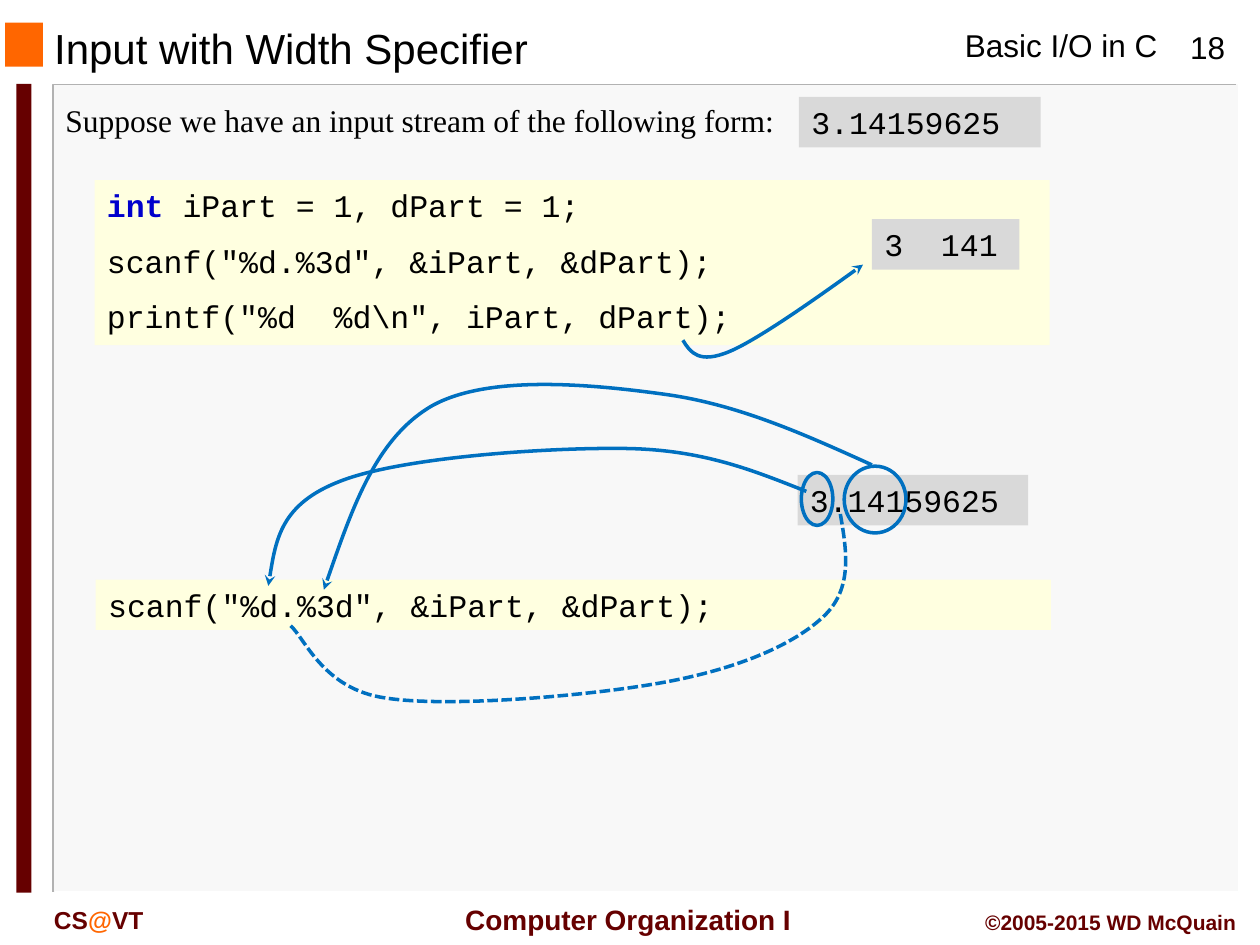
"""Builds the slide on scanf with a width specifier."""
from lxml import etree
from pptx import Presentation
from pptx import util as u
from pptx.dml.color import RGBColor
from pptx.enum import dml, shapes, text
from pptx.oxml.ns import qn

COLORS = {
    "ink": "000000", "maroon": "660000", "orange": "FF6600", "panel": "F8F8F8",
    "shade": "B2B2B2", "light": "FFFFFF", "stream": "D9D9D9", "code": "FFFFE0",
    "keyword": "0000CC", "arrow": "0070C0",
}
SANS, SERIF, MONO = "Arial", "Times New Roman", "Courier New"
LEFT, CENTER, RIGHT = text.PP_ALIGN.LEFT, text.PP_ALIGN.CENTER, text.PP_ALIGN.RIGHT
TOP, MIDDLE = text.MSO_ANCHOR.TOP, text.MSO_ANCHOR.MIDDLE


class SlideStyle:
    """Draws styled elements on a slide with a grid of 100 columns and 75 rows."""

    def __init__(self, deck):
        """Add a title-only page and measure its grid cell."""
        self.page = deck.slides.add_slide(deck.slide_layouts[5])
        self.column = deck.slide_width / 100
        self.row = deck.slide_height / 75

    def place(self, left, top, *size):
        """Turn grid columns and rows into lengths."""
        cells = (left, top, *size)
        steps = (self.column, self.row) * 2
        return [u.Emu(round(cell * step)) for cell, step in zip(cells, steps)]

    def color(self, name):
        """Look up a named colour."""
        return RGBColor.from_string(COLORS[name])

    def fill_text(self, box, lines, size=18, font=SANS, align=LEFT, anchor=TOP, bold=False):
        """Fill a box with lines, each a list of (words, colour) spans."""
        frame = box.text_frame
        frame.word_wrap = True
        frame.vertical_anchor = anchor
        for number, spans in enumerate(lines):
            para = frame.add_paragraph() if number else frame.paragraphs[0]
            para.alignment = align
            para.space_before = u.Pt(10 if number else 0)
            for words, color in spans:
                span = para.add_run()
                span.text = words
                span.font.name = font
                span.font.size = u.Pt(size)
                span.font.bold = bold or color == "keyword"
                span.font.color.rgb = self.color(color)

    def title(self, words, *area):
        """Move and format the title placeholder."""
        box = self.page.shapes.title
        box.left, box.top, box.width, box.height = self.place(*area)
        self.fill_text(box, [[(words, "ink")]], size=24, anchor=MIDDLE)

    def label(self, spans, *area, **style):
        """Add a one-line text box."""
        self.fill_text(self.page.shapes.add_textbox(*self.place(*area)), [spans], **style)

    def block(self, fill, *area, lines=()):
        """Add a filled rectangle, with code lines if given."""
        box = self.page.shapes.add_shape(shapes.MSO_SHAPE.RECTANGLE, *self.place(*area))
        box.shadow.inherit = False
        box.fill.solid()
        box.fill.fore_color.rgb = self.color(fill)
        box.line.fill.background()
        if lines:
            self.fill_text(box, lines, font=MONO)

    def stroke(self, shape, color, width):
        """Give a shape an outline and no fill."""
        shape.shadow.inherit = False
        shape.fill.background()
        shape.line.color.rgb = self.color(color)
        shape.line.width = u.Pt(width)

    def ring(self, *area):
        """Circle a part of the input."""
        oval = self.page.shapes.add_shape(shapes.MSO_SHAPE.OVAL, *self.place(*area))
        self.stroke(oval, "arrow", 2)

    def edge(self, points, color, width=1):
        """Draw an open outline through points."""
        start, *rest = [self.place(*point) for point in points]
        builder = self.page.shapes.build_freeform(*start)
        builder.add_line_segments(rest, close=False)
        shape = builder.convert_to_shape()
        self.stroke(shape, color, width)
        return shape

    def curve(self, points, dashed=False):
        """Draw a Bezier curve, dashed or ending in an arrowhead."""
        shape = self.edge(points, "arrow", 2)
        outline = shape.element.find(".//" + qn("a:path"))
        steps = outline.findall(qn("a:lnTo"))
        for first in range(0, len(steps), 3):
            bend = etree.SubElement(outline, qn("a:cubicBezTo"))
            for step in steps[first:first + 3]:
                bend.append(step[0])
                outline.remove(step)
        if dashed:
            shape.line.dash_style = dml.MSO_LINE.SQUARE_DOT
        else:
            line = shape.element.spPr.find(qn("a:ln"))
            etree.SubElement(line, qn("a:tailEnd"), type="stealth")


def main():
    """Build and save the deck."""
    deck = Presentation()
    deck.slide_width, deck.slide_height = u.Inches(10), u.Inches(7.5)
    style = SlideStyle(deck)

    style.block("panel", 4.3, 6.7, 94, 64.1)
    style.edge([(98.1, 6.7), (4.2, 6.7), (4.2, 70.8)], "shade")
    style.edge([(98.3, 6.7), (98.3, 70.8), (4.4, 70.8)], "light")
    style.block("orange", 0.4, 1.8, 3, 3.5)
    style.block("maroon", 1.3, 6.65, 1.2, 64.2)

    style.title("Input with Width Specifier", 3.3, 1.9, 63.3, 3.8)
    style.label([("Basic I/O in C", "ink")], 75.6, 1.6, 18.5, 4)
    style.label([("18", "ink")], 92.5, 1.7, 6.7, 4, align=CENTER)
    style.label([("CS", "maroon"), ("@", "orange"), ("VT", "maroon")],
                3.3, 71.3, 15, 3.3, size=14, bold=True)
    style.label([(" Computer Organization I", "maroon")], 35, 71.1, 29.1, 3.7,
                size=16, align=CENTER, anchor=MIDDLE, bold=True)
    style.label([("©2005-2015 WD McQuain", "maroon")], 73.3, 71.7, 25.8, 3,
                size=12, align=RIGHT, bold=True)

    stream = [[("3.14159625", "ink")]]
    scan = [('scanf("%d.%3d", &iPart, &dPart);', "ink")]
    program = [
        [("int ", "keyword"), ("iPart = 1, dPart = 1;", "ink")],
        scan,
        [(r'printf("%d  %d\n", iPart, dPart);', "ink")],
    ]
    style.label([("Suppose we have an input stream of the following form:", "ink")],
                4.2, 7.5, 92.5, 4, font=SERIF)
    style.block("stream", 63.4, 7.7, 19.2, 4, lines=stream)
    style.block("code", 7.5, 14.3, 75.8, 13.1, lines=program)
    style.block("stream", 69.2, 17.4, 11.7, 4, lines=[[("3  141", "ink")]])
    style.curve([(54.2, 27), (54.8, 28), (55.5, 28.9), (57.9, 27.9),
                 (60.3, 26.9), (66.7, 22.3), (68.5, 21)])

    style.block("stream", 63.3, 37.7, 18.3, 4, lines=stream)
    style.block("code", 7.6, 46, 75.8, 4, lines=[scan])
    style.ring(63.6, 37.5, 2.5, 4.2)
    style.ring(67, 37, 4.9, 5.3)
    style.curve([(64, 39), (59.9, 37.4), (55.9, 35.7), (49.7, 35.6),
                 (43.5, 35.5), (31.8, 36.3), (27, 38.2),
                 (22.3, 40), (21.8, 43.3), (21.3, 46.5)])
    style.curve([(69.2, 36.9), (63.9, 34.5), (58.6, 32.1), (52.8, 31.3),
                 (47, 30.5), (38.8, 29.7), (34.3, 32.2),
                 (29.8, 34.8), (27.8, 40.8), (25.7, 46.8)])
    style.curve([(66.7, 40.8), (67.2, 43.7), (67.7, 46.7), (65.4, 48.9),
                 (63.1, 51.1), (58.8, 53), (53, 54.1),
                 (47.2, 55.2), (35.6, 56.2), (30.6, 55.4),
                 (25.6, 54.7), (24.2, 50.6), (23, 49.6)], dashed=True)

    deck.save("out.pptx")


if __name__ == "__main__":
    main()
